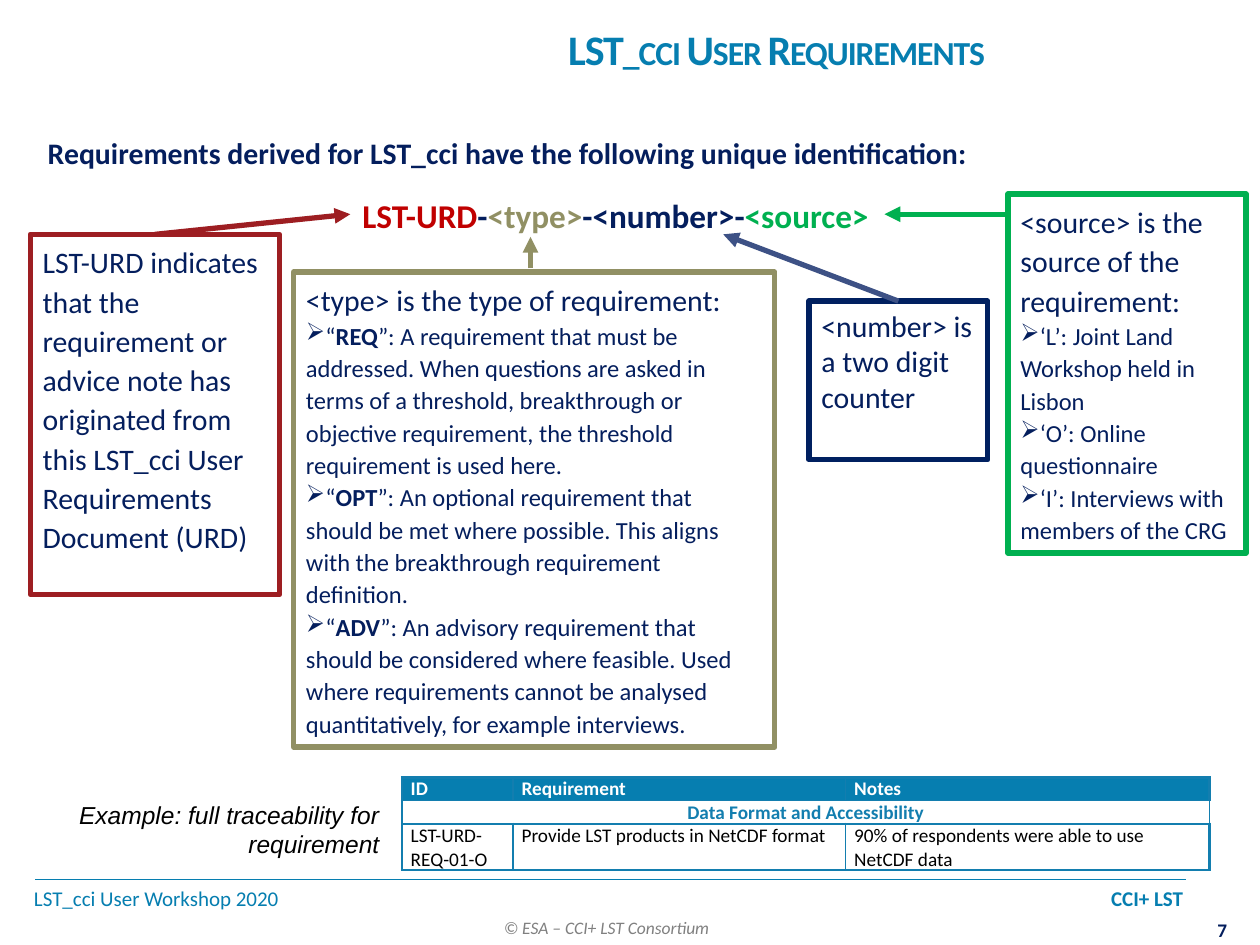
from dataclasses import dataclass
from typing import NamedTuple

from lxml.etree import SubElement as Sub
from pptx import Presentation
from pptx.dml.color import RGBColor as Rgb
from pptx.enum.shapes import MSO_CONNECTOR as Conn, MSO_SHAPE as Geo
from pptx.enum.text import MSO_ANCHOR as Anchor, PP_ALIGN as Align
from pptx.oxml.ns import qn
from pptx.util import Inches, Pt

HEX = {
    "navy": "041E5D", "blue": "067EB0", "rule": "137EAF", "gray": "808080",
    "red": "C00000", "brick": "9D1E22", "olive": "919064", "green": "00B050",
    "deep": "002060", "slate": "3D5185", "white": "FFFFFF", "black": "000000",
}
INSET = (0.1, 0.05, 0.1, 0.05)


class Bit(NamedTuple):
    text: str
    bold: bool = False
    hue: str = ""


@dataclass
class Para:
    bits: list[Bit]
    size: float = 17
    hue: str = "navy"
    align: Align = Align.LEFT
    lead: float = 1.0
    pre: float = 0
    post: float = 0
    mark: bool = False
    tab: float = 0
    slant: bool = False
    face: str = "Calibri"


@dataclass
class Card:
    at: tuple[float, float, float, float]
    hue: str
    paras: list[Para]


@dataclass
class Arrow:
    start: tuple[float, float]
    end: tuple[float, float]
    hue: str
    width: float = 3
    head: bool = True


def color(name: str) -> Rgb:
    return Rgb.from_string(HEX[name])


def write(frame, paras: list[Para]) -> None:
    for i, item in enumerate(paras):
        para = frame.add_paragraph() if i else frame.paragraphs[0]
        prop = para._p.get_or_add_pPr()
        if item.mark:
            prop.set("marL", "0")
            prop.set("indent", str(-Inches(0.19)))
            Sub(prop, qn("a:buChar"), char="➢")
        if item.tab:
            tabs = Sub(prop, qn("a:tabLst"))
            Sub(tabs, qn("a:tab"), pos=str(Inches(item.tab)), algn="r")
        para.alignment = item.align
        para.line_spacing = item.lead
        para.space_before = Pt(item.pre)
        para.space_after = Pt(item.post)
        for bit in item.bits:
            run = para.add_run()
            run.text = bit.text
            font = run.font
            font.name, font.size = item.face, Pt(item.size)
            font.bold, font.italic = bit.bold, item.slant
            font.color.rgb = color(bit.hue or item.hue)


def setup(frame, inset=INSET, anchor: Anchor = Anchor.TOP, wrap: bool = True) -> None:
    frame.word_wrap = wrap
    frame.vertical_anchor = anchor
    frame.margin_left, frame.margin_top, frame.margin_right, frame.margin_bottom = map(Inches, inset)


def label(slide, at, paras: list[Para], **opts):
    frame = slide.shapes.add_textbox(*map(Inches, at)).text_frame
    setup(frame, **opts)
    write(frame, paras)
    return frame


def draw_card(slide, card: Card) -> None:
    box = slide.shapes.add_shape(Geo.RECTANGLE, *map(Inches, card.at))
    box.shadow.inherit = False
    box.fill.background()
    box.line.color.rgb = color(card.hue)
    box.line.width = Pt(3)
    setup(box.text_frame)
    write(box.text_frame, card.paras)


def draw_arrow(slide, arrow: Arrow) -> None:
    link = slide.shapes.add_connector(Conn.STRAIGHT, *map(Inches, arrow.start + arrow.end))
    link.line.color.rgb = color(arrow.hue)
    link.line.width = Pt(arrow.width)
    if arrow.head:
        Sub(link.line._ln, qn("a:tailEnd"), type="triangle")
    Sub(link._element.spPr, qn("a:effectLst"))


def edge(cell, sides: dict[str, float]) -> None:
    prop = cell._tc.get_or_add_tcPr()
    for side, width in sides.items():
        line = Sub(prop, qn(f"a:ln{side}"), w=str(Pt(width)))
        fill = Sub(line, qn("a:solidFill"))
        Sub(fill, qn("a:srgbClr"), val=HEX["rule"])


def draw_table(slide, at, cols: list[float], rows: list[float], data: list[list[Para]]) -> None:
    table = slide.shapes.add_table(len(rows), len(cols), *map(Inches, at)).table
    for col, width in zip(table.columns, cols):
        col.width = Inches(width)
    for row, height in zip(table.rows, rows):
        row.height = Inches(height)
    table.cell(1, 0).merge(table.cell(1, 2))
    for r, line in enumerate(data):
        for c in range(len(cols)):
            cell = table.cell(r, c)
            edge(cell, {
                "L": 1 if c else 1.5,
                "R": 1.5 if c == 2 else 1,
                "T": 1 if r == 1 else 1.5,
                "B": 1.5 if r else 1,
            })
            cell.fill.solid()
            cell.fill.fore_color.rgb = color("white" if r else "blue")
            cell.margin_left = cell.margin_right = Inches(0.07)
            cell.margin_top = cell.margin_bottom = 0
            if c < len(line):
                write(cell.text_frame, [line[c]])


def term(code: str, text: str) -> Para:
    return Para([Bit("“"), Bit(code, True), Bit("”: " + text)], 14, lead=1.1, mark=True)


def origin(text: str) -> Para:
    return Para([Bit(text)], 14, lead=1.1, mark=True)


def intro(text: str, lead: float = 1.1) -> Para:
    return Para([Bit(text)], lead=lead)


CARDS = [
    Card((0.24, 1.86, 1.98, 2.86), "brick", [intro(
        "LST-URD indicates that the requirement or advice note has originated from this LST_cci User Requirements Document (URD)")]),
    Card((2.33, 2.16, 3.82, 3.77), "olive", [
        intro("<type> is the type of requirement:"),
        term("REQ", "A requirement that must be addressed. When questions are asked in terms of a threshold, breakthrough or objective requirement, the threshold requirement is used here."),
        term("OPT", "An optional requirement that should be met where possible. This aligns with the breakthrough requirement definition."),
        term("ADV", "An advisory requirement that should be considered where feasible. Used where requirements cannot be analysed quantitatively, for example interviews."),
    ]),
    Card((6.42, 2.39, 1.42, 1.26), "deep", [intro("<number> is a two digit counter", 1.0)]),
    Card((8, 1.54, 1.89, 2.85), "green", [
        intro("<source> is the source of the requirement:"),
        origin("‘L’: Joint Land Workshop held in Lisbon"),
        origin("‘O’: Online questionnaire"),
        origin("‘I’: Interviews with members of the CRG"),
    ]),
]
ARROWS = [
    Arrow((0.28, 6.98), (9.41, 6.98), "blue", 1, False),
    Arrow((1.23, 1.86), (2.78, 1.7), "brick"),
    Arrow((4.21, 2.13), (4.21, 1.88), "olive"),
    Arrow((7.13, 2.39), (5.74, 1.86), "slate"),
    Arrow((8, 1.7), (7.02, 1.7), "green"),
]
GRID = [
    [Para([Bit(t, True)], 11, "white", Align.JUSTIFY) for t in ("ID", "Requirement", "Notes")],
    [Para([Bit("Data Format and Accessibility", True)], 11, "rule", Align.CENTER)],
    [Para([Bit(t)], 11, "black") for t in (
        "LST-URD-REQ-01-O", "Provide LST products in NetCDF format",
        "90% of respondents were able to use NetCDF data")],
]


def main() -> None:
    deck = Presentation()
    deck.slide_width, deck.slide_height = Inches(10), Inches(7.5)
    slide = deck.slides.add_slide(deck.slide_layouts[6])
    label(slide, (0.27, 6.98, 9.14, 0.3), [Para(
        [Bit("LST_cci User Workshop 2020\t"), Bit("CCI+ LST", True)], 12, "blue", tab=9.12)],
        inset=(0, 0.05, 0, 0.05))
    label(slide, (3.9, 7.23, 1.86, 0.27), [Para(
        [Bit("© ESA – CCI+ LST Consortium")], 10, "gray", slant=True)], wrap=False)
    label(slide, (9.57, 7.29, 0.26, 0.19), [Para(
        [Bit("7", True)], 11, align=Align.CENTER)], inset=(0, 0, 0, 0), wrap=False)
    title = label(slide, (3.5, 0.05, 5.12, 0.67), [Para(
        [Bit("LST_cci User Requirements", True)], 24, "blue", Align.CENTER)], anchor=Anchor.MIDDLE)
    prop = title.paragraphs[0].runs[0].font._element
    prop.set("cap", "small")
    prop.set("spc", "-60")
    label(slide, (0.28, 0.99, 9.21, 1.02), [
        Para([Bit("Requirements derived for LST_cci have the following unique identification:", True)],
             lead=1.1, post=6),
        Para([Bit("LST-URD", True, "red"), Bit("-", True), Bit("<type>", True, "olive"),
              Bit("-<number>-", True), Bit("<source>", True, "green")],
             19, align=Align.CENTER, lead=1.1, pre=6, post=6),
    ])
    for card in CARDS:
        draw_card(slide, card)
    for arrow in ARROWS:
        draw_arrow(slide, arrow)
    draw_table(slide, (3.19, 6.17, 6.41, 0.73), [0.88, 2.64, 2.89], [0.18, 0.18, 0.37], GRID)
    label(slide, (0.24, 6.3, 2.87, 0.57), [Para(
        [Bit("Example: full traceability for requirement")], 14, "black",
        Align.RIGHT, slant=True, face="Arial")])
    deck.save("out.pptx")


if __name__ == "__main__":
    main()
